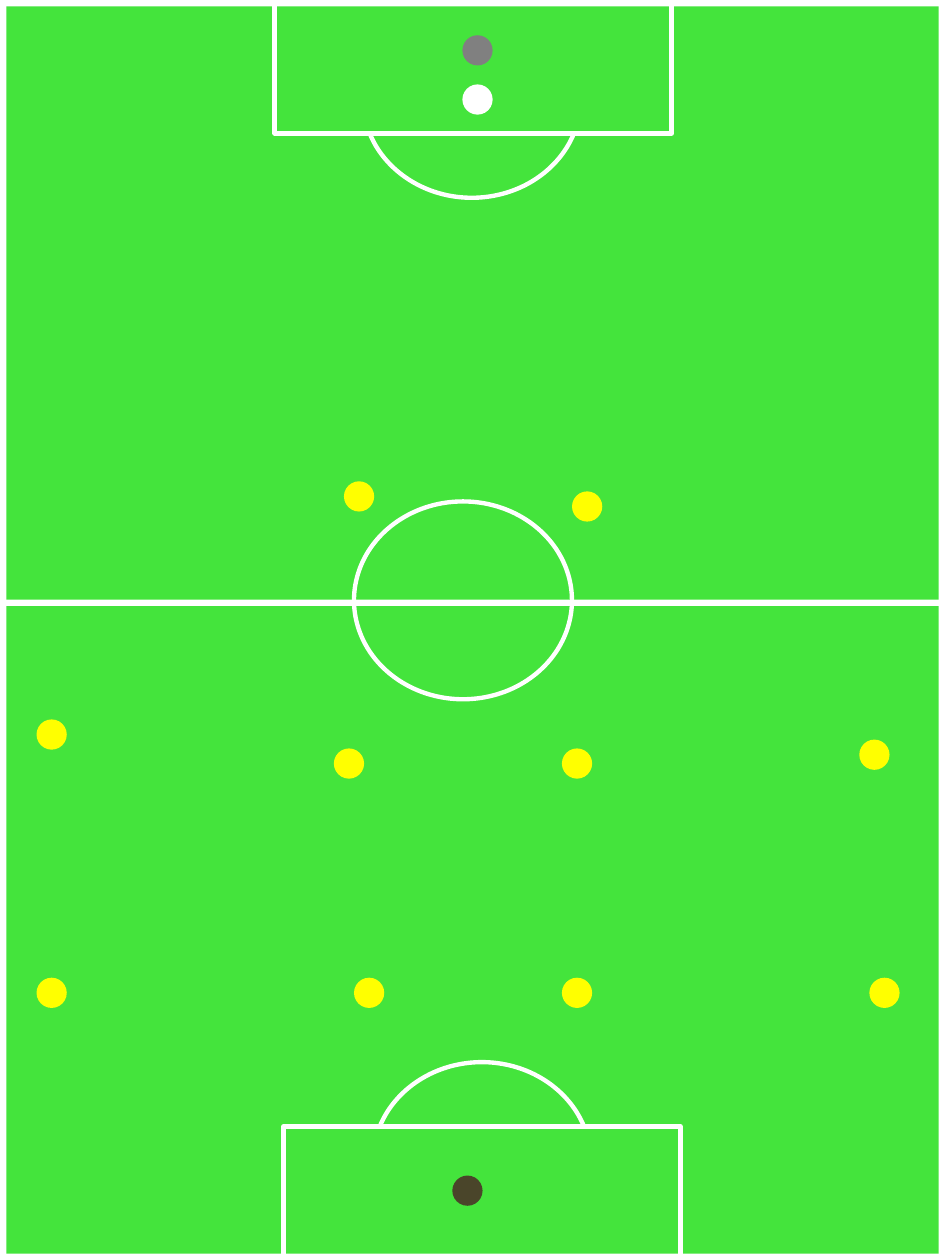
from dataclasses import dataclass

from pptx import Presentation
from pptx.dml.color import RGBColor
from pptx.enum.shapes import MSO_SHAPE
from pptx.util import Emu, Pt

PX = 9144  # one px is a hundredth of an inch
WIDTH, HEIGHT = 750, 1000
EDGE = 5
CIRCLE = (173, 157)
PENALTY_AREA = (315, 106)
PLAYER = (24, 24)


@dataclass(frozen=True)
class Theme:
    grass: str = "44E43C"
    chalk: str = "FFFFFF"
    team: str = "FFFF00"
    keeper: str = "4A452A"
    rival_keeper: str = "808080"
    rival: str = "FFFFFF"
    line_width: float = 2.5


THEME = Theme()

# Left and top of each outfield player, row by row
TEAM = [
    (273, 382), (454, 390),
    (29, 571), (265, 594), (446, 594), (682, 587),
    (29, 776), (281, 776), (446, 776), (690, 776),
]


def add_shape(shapes, kind, place, size, fill=None, line=None):
    shape = shapes.add_shape(kind, *(Emu(n * PX) for n in (*place, *size)))
    shape.shadow.inherit = False
    if fill:
        shape.fill.solid()
        shape.fill.fore_color.rgb = RGBColor.from_string(fill)
    else:
        shape.fill.background()
    if line:
        shape.line.color.rgb = RGBColor.from_string(line)
        shape.line.width = Pt(THEME.line_width)
    else:
        shape.line.fill.background()
    return shape


def add_band(shapes, place, size):
    return add_shape(shapes, MSO_SHAPE.RECTANGLE, place, size, fill=THEME.chalk)


def add_circle(shapes, place):
    return add_shape(shapes, MSO_SHAPE.OVAL, place, CIRCLE, line=THEME.chalk)


def add_penalty_area(shapes, place):
    return add_shape(shapes, MSO_SHAPE.RECTANGLE, place, PENALTY_AREA,
                     fill=THEME.grass, line=THEME.chalk)


def add_player(shapes, place, colour):
    return add_shape(shapes, MSO_SHAPE.OVAL, place, PLAYER, fill=colour)


def add_pitch(page):
    pitch = page.shapes.add_group_shape().shapes

    # Touchlines and halfway line
    for left in (0, WIDTH - EDGE):
        add_band(pitch, (left, 0), (EDGE, HEIGHT))
    add_band(pitch, (0, 476), (WIDTH, EDGE))

    # Centre circle, then the circles that the penalty areas partly cover
    for place in ((281, 398), (288, 0), (296, HEIGHT - CIRCLE[1])):
        add_circle(pitch, place)

    # Penalty areas, each closed by its goal line
    for area_left, area_top, goal_line in (
        (225, HEIGHT - PENALTY_AREA[1], HEIGHT - EDGE),
        (218, 0, 0),
    ):
        add_penalty_area(pitch, (area_left, area_top))
        add_band(pitch, (0, goal_line), (WIDTH, EDGE))


def add_players(page):
    for place in TEAM:
        add_player(page.shapes, place, THEME.team)
    add_player(page.shapes, (359, 933), THEME.keeper)
    add_player(page.shapes, (367, 28), THEME.rival_keeper)
    add_player(page.shapes, (367, 67), THEME.rival)


def main():
    deck = Presentation()
    deck.slide_width, deck.slide_height = Emu(WIDTH * PX), Emu(HEIGHT * PX)
    page = deck.slides.add_slide(deck.slide_layouts[6])
    page.background.fill.solid()
    page.background.fill.fore_color.rgb = RGBColor.from_string(THEME.grass)
    add_pitch(page)
    add_players(page)
    deck.save("out.pptx")


if __name__ == "__main__":
    main()
